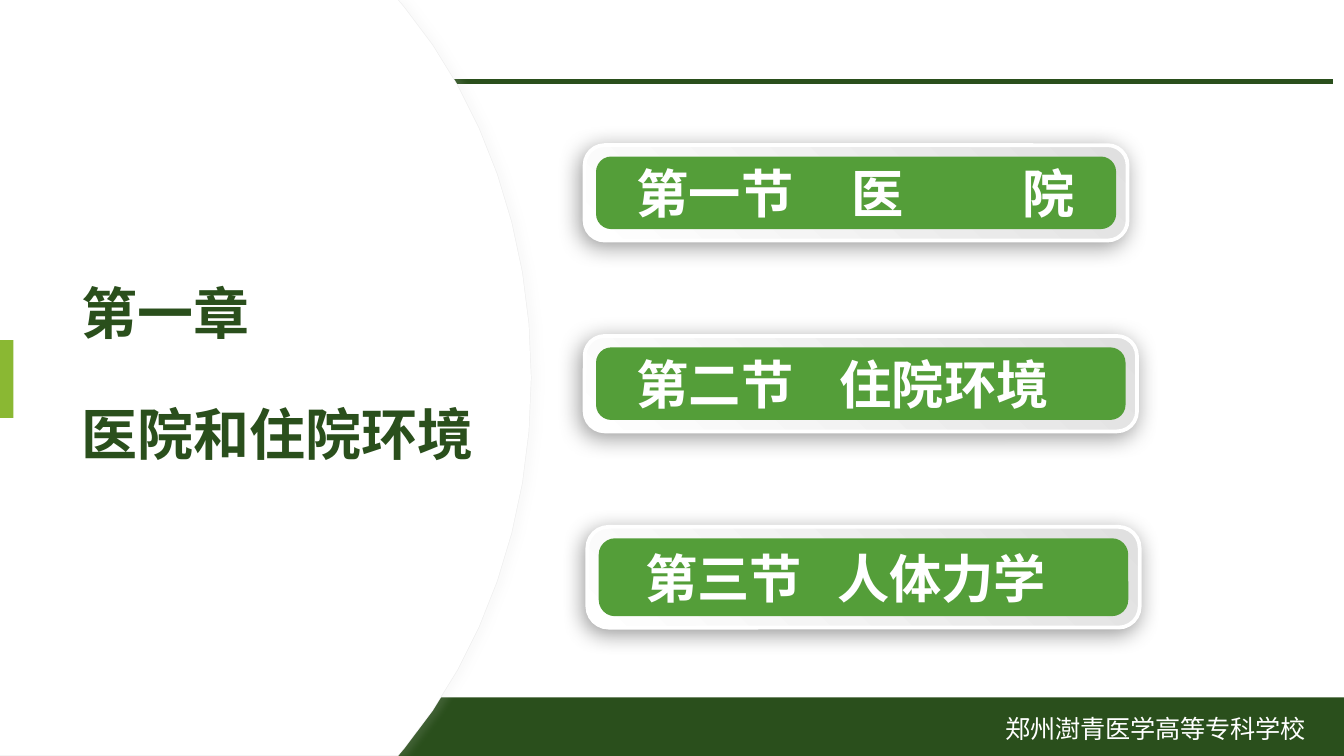
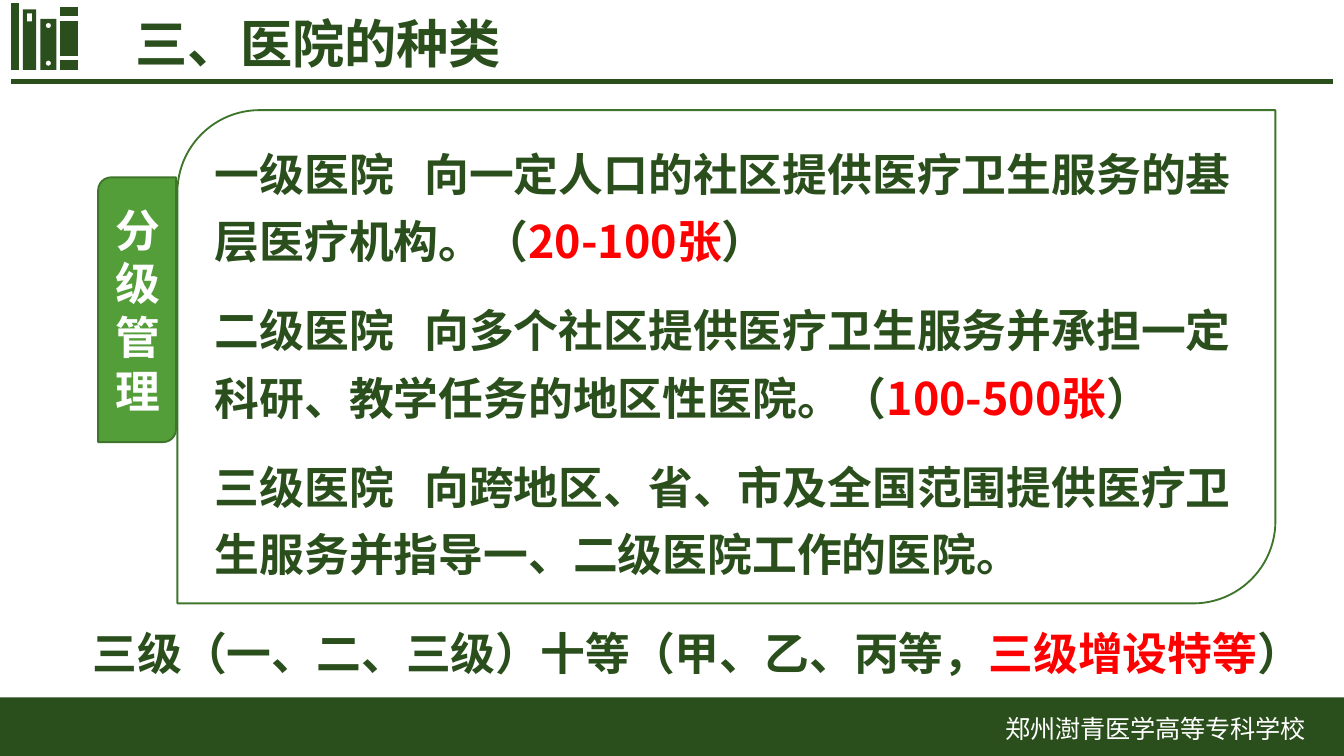
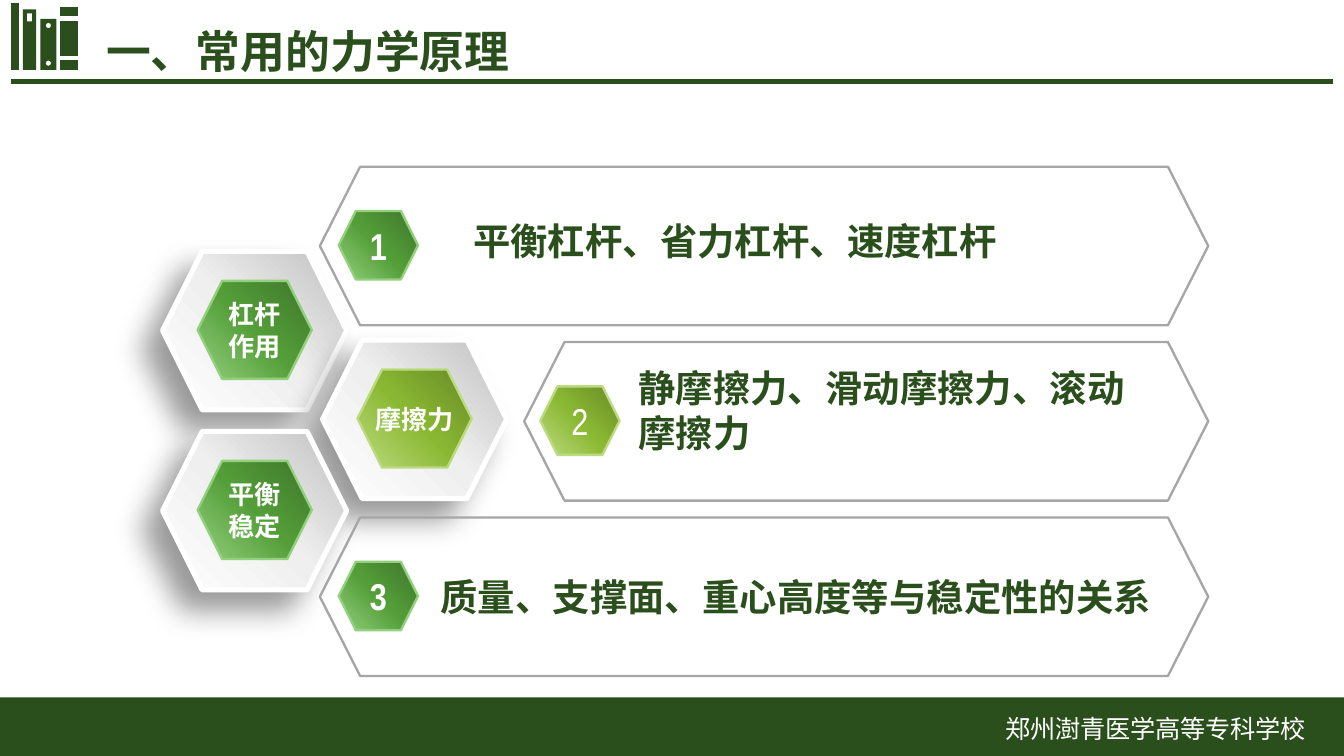
from math import cos, pi, sin

from lxml import etree
from pptx import Presentation
from pptx.dml.color import RGBColor
from pptx.enum.lang import MSO_LANGUAGE_ID
from pptx.enum.shapes import MSO_SHAPE
from pptx.enum.text import MSO_ANCHOR, MSO_AUTO_SIZE, PP_ALIGN
from pptx.oxml.ns import qn
from pptx.util import Inches, Pt

RECT = MSO_SHAPE.RECTANGLE
ROUNDED = MSO_SHAPE.ROUNDED_RECTANGLE
DIAGONAL = MSO_SHAPE.ROUND_2_DIAG_RECTANGLE
HEXAGON = MSO_SHAPE.HEXAGON
LEFT, CENTER = PP_ALIGN.LEFT, PP_ALIGN.CENTER
TOP, MIDDLE = MSO_ANCHOR.TOP, MSO_ANCHOR.MIDDLE
FIXED = MSO_AUTO_SIZE.NONE
CHINESE = MSO_LANGUAGE_ID.SIMPLIFIED_CHINESE
CJK = "Noto Sans CJK SC"
NARROW = "Arial Narrow"
COLORS = {
    "dark": "2A4F1C", "green": "549E39", "lime": "8AB833", "edge": "3E752A",
    "white": "FFFFFF", "red": "FF0000", "black": "000000", "pale": "EFEFEF",
    "mist": "E0E0E0", "silver": "BFBFBF", "gray": "A6A6A6", "haze": "D9D9D9",
    "green light": "93D07D", "green deep": "3F762B",
    "lime light": "BBDB7E", "lime deep": "678A26",
}


def draw(shapes, outline, at=None, fill=None, angle=0, line=None, width=1, shadow=None, adjust=None):
    if isinstance(outline, list):
        first, *holes = outline
        builder = shapes.build_freeform(Inches(first[0][0]), Inches(first[0][1]), scale=1.0)
        builder.add_line_segments([(Inches(x), Inches(y)) for x, y in first[1:]])
        for hole in holes:
            builder.move_to(Inches(hole[0][0]), Inches(hole[0][1]))
            builder.add_line_segments([(Inches(x), Inches(y)) for x, y in hole[1:]])
        shape = builder.convert_to_shape()
    else:
        shape = shapes.add_shape(outline, *map(Inches, at))
    shape.shadow.inherit = False
    if adjust is not None:
        shape.adjustments[0] = adjust
    properties = shape._element.spPr
    if fill is None:
        shape.fill.background()
    elif isinstance(fill, str):
        shape.fill.solid()
        shape.fill.fore_color.rgb = RGBColor.from_string(COLORS[fill])
    else:
        shape.fill.gradient()
        shape.fill.gradient_angle = 360 - angle
        stops = properties.find(qn("a:gradFill")).find(qn("a:gsLst"))
        for stop in list(stops):
            stops.remove(stop)
        for index, name in enumerate(fill):
            position = 100000 * index // (len(fill) - 1)
            stop = etree.SubElement(stops, qn("a:gs"), pos=str(position))
            etree.SubElement(stop, qn("a:srgbClr"), val=COLORS[name])
    if line is None:
        shape.line.fill.background()
    else:
        shape.line.color.rgb = RGBColor.from_string(COLORS[line])
        shape.line.width = Pt(width)
    if shadow:
        name, opacity, blur, distance, direction = shadow
        outer = etree.SubElement(
            properties.find(qn("a:effectLst")), qn("a:outerShdw"), blurRad=str(Pt(blur)),
            dist=str(Pt(distance)), dir=str(direction * 60000), algn="ctr", rotWithShape="0")
        tint = etree.SubElement(outer, qn("a:srgbClr"), val=COLORS[name])
        etree.SubElement(tint, qn("a:alpha"), val=str(opacity * 1000))
    return shape


def write(box, paragraphs, size, font="Arial", color="dark", bold=True, align=LEFT, anchor=TOP,
          insets=(0.1, 0.05, 0.1, 0.05), wrap=True, spacing=None, before=0, after=None, tabs=()):
    frame = box.text_frame
    frame.word_wrap = wrap
    frame.auto_size = FIXED
    frame.vertical_anchor = anchor
    frame.margin_left, frame.margin_top, frame.margin_right, frame.margin_bottom = map(Inches, insets)
    for index, spans in enumerate(paragraphs):
        para = frame.add_paragraph() if index else frame.paragraphs[0]
        para.alignment = align
        if spacing:
            para.line_spacing = spacing
        para.space_before = Pt(before if index else 0)
        if after is not None:
            para.space_after = Pt(after)
        if tabs:
            stops = etree.SubElement(para._p.get_or_add_pPr(), qn("a:tabLst"))
            for tab in tabs:
                etree.SubElement(stops, qn("a:tab"), pos=str(Inches(tab)), algn="l")
        for text, tone in [(spans, color)] if isinstance(spans, str) else spans:
            span = para.add_run()
            span.text = text
            span.font.size = Pt(size)
            span.font.bold = bold
            span.font.name = font
            span.font.language_id = CHINESE
            span.font.color.rgb = RGBColor.from_string(COLORS[tone])
            etree.SubElement(span._r.get_or_add_rPr(), qn("a:ea"), typeface=CJK)


deck = Presentation()
deck.slide_width, deck.slide_height = Inches(10), Inches(5.625)
layout = deck.slide_layouts[5]
titles = [
    (["第一章", "医院和住院环境"], (0.51, 0.95, 3.23, 3.71), 30, "Montserrat"),
    (["三、医院的种类"], (0.91, 0.17, 6.45, 0.36), 28, "Montserrat"),
    (["一、常用的力学原理"], (0.69, -0.14, 8.62, 1.09), 24, "Arial"),
]
chapter, kinds, mechanics = pages = [deck.slides.add_slide(layout) for _ in titles]

bars = [(0.08, 0.59, 9.92, 0.625), (0.08, 0.02, 0.14, 0.52), (0.45, 0.45, 0.58, 0.52),
        (0.45, 0.16, 0.58, 0.42), (0.45, 0.05, 0.58, 0.12), (0.3, 0.14, 0.42, 0.52),
        (0.17, 0.07, 0.27, 0.52)]
emblem = [[[(x1, y1), (x2, y1), (x2, y2), (x1, y2)]] for x1, y1, x2, y2 in bars]
for hole_y in (0.19, 0.47):
    emblem[5].append([(0.36 + 0.02 * cos(pi * step / 4), hole_y - 0.02 * sin(pi * step / 4))
                      for step in range(8)])
emblem[6].append([(0.2, 0.1), (0.2, 0.16), (0.24, 0.16), (0.24, 0.1)])

group = chapter.shapes.add_group_shape()
for contours in emblem:
    draw(group.shapes, contours, fill="dark")
band = draw(chapter.shapes, RECT, (0, 5.19, 10, 0.44), fill="dark")
school = chapter.shapes.add_textbox(*map(Inches, (7.38, 5.26, 2.62, 0.33)))
write(school, ["郑州澍青医学高等专科学校"], 13.5, font=CJK, color="white", bold=False)
for shared in (group, band, school):
    layout.shapes._spTree.append(shared._element)

arc = []
for step in range(9):
    t = step / 8
    weights = ((1 - t) ** 3, 3 * t * (1 - t) ** 2, 3 * t ** 2 * (1 - t), t ** 3)
    arc.append((sum(w * x for w, x in zip(weights, (3.01, 3.59, 3.95, 3.95))),
                sum(w * y for w, y in zip(weights, (0.06, 0.76, 1.74, 2.81)))))
half = [(0, 0), (2.96, 0)] + arc
disc = half + [(x, 5.62 - y) for x, y in half[-2::-1]]
draw(chapter.shapes, [disc], fill="white", line="pale", width=0.75, shadow=("haze", 12, 4, 3, 0))
draw(chapter.shapes, [disc], fill="white")

for page, (lines, place, size, font) in zip(pages, titles):
    title = page.shapes.title
    title.left, title.top, title.width, title.height = map(Inches, place)
    page.shapes._spTree.append(title._element)
    write(title, lines, size, font=font, anchor=MIDDLE, spacing=0.9, before=32)

draw(chapter.shapes, RECT, (0, 2.53, 0.1, 0.58), fill="lime")
sections = [
    ("第一节\t医\t院", (4.35, 1.08, 4.04, 0.71), 0.27, (1.6, 2.87)),
    ("第二节\t住院环境", (4.35, 2.5, 4.11, 0.71), 0.27, (1.51,)),
    ("第三节\t人体力学", (4.37, 3.92, 4.11, 0.75), 0.31, (1.43,)),
]
for text, (left, top, width, height), indent, tabs in sections:
    group = chapter.shapes.add_group_shape()
    draw(group.shapes, ROUNDED, (left, top, width, height), fill=("mist", "white"), angle=135,
         line="white", width=2, shadow=("black", 40, 12, 3, 135), adjust=0.21)
    button = draw(group.shapes, ROUNDED, (left + 0.085, top + 0.085, width - 0.17, height - 0.17),
                  fill="green", adjust=0.21)
    write(button, [text], 28, font=NARROW, color="white", anchor=MIDDLE,
          insets=(indent, 0, 0, 0), tabs=tabs)

summary = kinds.shapes.add_textbox(*map(Inches, (0.59, 4.61, 9.29, 0.5)))
write(summary, [[("三级（一、二、三级）十等（甲、乙、丙等，", "dark"), ("三级增设特等", "red"), ("）", "dark")]],
      24, wrap=False)
levels = draw(kinds.shapes, DIAGONAL, (1.32, 0.82, 8.17, 3.67), line="edge")
write(levels, [
    [("一级医院\t向一定人口的社区提供医疗卫生服务的基层医疗机构。（", "dark"), ("20-100张", "red"), ("）", "dark")],
    [("二级医院\t向多个社区提供医疗卫生服务并承担一定科研、教学任务的地区性医院。（", "dark"),
     ("100-500张", "red"), ("）", "dark")],
    "三级医院\t向跨地区、省、市及全国范围提供医疗卫生服务并指导一、二级医院工作的医院。",
], 24, font=CJK, anchor=MIDDLE, spacing=1.25, after=12, tabs=(1.56,))
label = draw(kinds.shapes, DIAGONAL, (0.73, 1.32, 0.58, 1.97), fill="green", line="edge")
write(label, ["分级管理"], 24, color="white", align=CENTER, anchor=MIDDLE)

principles = [
    (["杠杆", "作用"], 1.21, 1.87, "green", 2.38, 2.52),
    (["摩擦力"], 2.4, 2.53, "lime", 3.9, 4.02),
    (["平衡", "稳定"], 1.21, 3.21, "green", 2.38, 2.52),
]
for lines, left, top, hue, start, badge_left in principles:
    draw(mechanics.shapes, HEXAGON, (left, top, 1.37, 1.18), fill=("silver", "pale", "white"),
         angle=135, line="white", width=2.75, shadow=("black", 40, 16, 14, 135))
for index, (lines, left, top, hue, start, badge_left) in enumerate(principles):
    row_top = 1.24 + 1.305 * index
    draw(mechanics.shapes, [[(start + 0.3, row_top), (8.69, row_top), (8.99, row_top + 0.59),
                             (8.69, row_top + 1.18), (start + 0.3, row_top + 1.18),
                             (start, row_top + 0.59)]], line="gray", width=1.25)
    shades = (hue + " light", hue, hue + " deep")
    cells = [([str(index + 1)], (badge_left, row_top + 0.33, 0.59, 0.51), 20, hue == "green"),
             (lines, (left + 0.26, top + 0.22, 0.85, 0.73), 14, True)]
    for words, place, size, bold in cells:
        cell = draw(mechanics.shapes, HEXAGON, place, fill=shades, angle=315,
                    line=shades[0], width=1.25)
        write(cell, words, size, font=NARROW, color="white", bold=bold, align=CENTER,
              anchor=MIDDLE, insets=(0, 0.05, 0, 0.05), wrap=False)

details = [
    ("平衡杠杆、省力杠杆、速度杠杆", (3.39, 1.55, 4.92, 0.47), (0.13, 0.07, 0.13, 0.07)),
    ("静摩擦力、滑动摩擦力、滚动摩擦力", (4.62, 2.65, 4.13, 0.81), (0.13, 0.07, 0.13, 0.07)),
    ("质量、支撑面、重心高度等与稳定性的关系", (3.18, 4.22, 5.81, 0.44), (0.1, 0.05, 0.1, 0.05)),
]
for text, place, insets in details:
    detail = mechanics.shapes.add_textbox(*map(Inches, place))
    write(detail, [text], 20, insets=insets)

deck.save("out.pptx")
